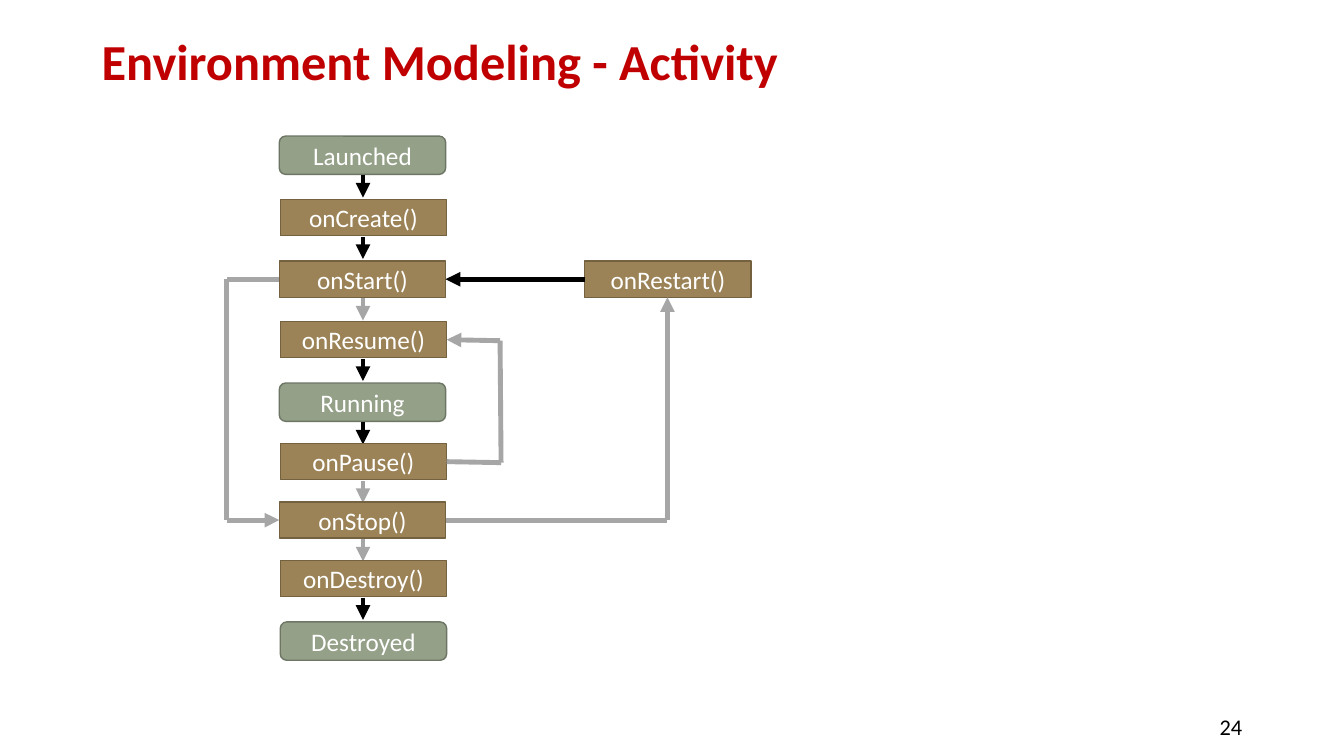
from dataclasses import dataclass
from itertools import pairwise

from lxml.etree import SubElement
from pptx import Presentation
from pptx.dml.color import RGBColor
from pptx.enum.shapes import MSO_CONNECTOR, MSO_SHAPE
from pptx.enum.text import MSO_ANCHOR, PP_ALIGN
from pptx.oxml.ns import qn
from pptx.util import Inches, Pt


@dataclass(frozen=True)
class Theme:
    font: str = "Calibri"
    title: str = "C00000"
    black: str = "000000"
    white: str = "FFFFFF"
    gray: str = "A6A6A6"
    state: tuple = ("94A088", "6D7665")
    call: tuple = ("9B8357", "736140")
    title_size: int = 36
    box_size: int = 18
    page_size: int = 16
    edge: float = 1
    arrow: float = 3.5


THEME = Theme()
BOX_W, STATE_H, CALL_H = 1.65, 0.38, 0.36
MID_X, STEP_LEN = 3.6, 0.22

# Label, left, top, and colour of the arrow to the next step
STEPS = [
    ("Launched", 2.77, 1.35, THEME.black),
    ("onCreate()", 2.78, 1.98, THEME.black),
    ("onStart()", 2.77, 2.59, THEME.gray),
    ("onResume()", 2.78, 3.19, THEME.black),
    ("Running", 2.77, 3.8, THEME.black),
    ("onPause()", 2.78, 4.4, THEME.gray),
    ("onStop()", 2.77, 4.98, THEME.gray),
    ("onDestroy()", 2.78, 5.56, THEME.black),
    ("Destroyed", 2.78, 6.17, None),
]

# Colour and corner points of each route beside the main column
ROUTES = [
    (THEME.gray, [(2.77, 2.77), (2.25, 2.77), (2.25, 5.16), (2.77, 5.16)]),
    (THEME.gray, [(4.42, 5.16), (6.62, 5.16), (6.62, 2.95)]),
    (THEME.black, [(5.8, 2.77), (4.42, 2.77)]),
    (THEME.gray, [(4.43, 4.58), (4.97, 4.59), (4.96, 3.38), (4.43, 3.37)]),
]


def color(code):
    return RGBColor.from_string(code)


def write(shape, text, size, tint, align, bold=False):
    frame = shape.text_frame
    frame.word_wrap = True
    frame.vertical_anchor = MSO_ANCHOR.MIDDLE
    frame.text = text
    line = frame.paragraphs[0]
    line.alignment = align
    font = line.runs[0].font
    font.name, font.size, font.bold = THEME.font, Pt(size), bold
    font.color.rgb = color(tint)
    return line


def add_label(slide, area, *style, **more):
    label = slide.shapes.add_textbox(*map(Inches, area))
    return write(label, *style, **more)


def add_box(slide, text, left, top):
    """Draw a call as a rectangle or a state as a rounded one; return its bottom."""
    is_call = text.endswith("()")
    kind = MSO_SHAPE.RECTANGLE if is_call else MSO_SHAPE.ROUNDED_RECTANGLE
    fill, edge = THEME.call if is_call else THEME.state
    height = CALL_H if is_call else STATE_H
    box = slide.shapes.add_shape(kind, *map(Inches, (left, top, BOX_W, height)))
    box.shadow.inherit = False
    box.fill.solid()
    box.fill.fore_color.rgb = color(fill)
    box.line.color.rgb = color(edge)
    box.line.width = Pt(THEME.edge)
    write(box, text, THEME.box_size, THEME.white, PP_ALIGN.CENTER)
    return top + height


def add_line(slide, start, end, tint, arrow=False):
    line = slide.shapes.add_connector(
        MSO_CONNECTOR.STRAIGHT, *map(Inches, (*start, *end)))
    line.line.color.rgb = color(tint)
    line.line.width = Pt(THEME.arrow)
    if arrow:
        SubElement(line.line._get_or_add_ln(), qn("a:tailEnd"), type="triangle")
    SubElement(line._element.spPr, qn("a:effectLst"))


def add_route(slide, tint, points):
    """Join the points with lines, the last one ending in an arrowhead."""
    for start, end in pairwise(points):
        add_line(slide, start, end, tint, arrow=end == points[-1])


def main():
    deck = Presentation()
    deck.slide_width, deck.slide_height = Inches(13.33), Inches(7.5)
    slide = deck.slides.add_slide(deck.slide_layouts[6])

    title = add_label(slide, (0.91, 0.12, 11.5, 1.04),
                      "Environment Modeling - Activity",
                      THEME.title_size, THEME.title, PP_ALIGN.LEFT, bold=True)
    title.line_spacing = 0.9
    add_label(slide, (9.42, 7.07, 3, 0.28), "24",
              THEME.page_size, THEME.black, PP_ALIGN.RIGHT)

    add_box(slide, "onRestart()", 5.8, 2.59)
    for text, left, top, tint in STEPS:
        start = add_box(slide, text, left, top) + 0.01
        if tint:
            add_route(slide, tint, [(MID_X, start), (MID_X, start + STEP_LEN)])
    for tint, points in ROUTES:
        add_route(slide, tint, points)

    deck.save("out.pptx")


if __name__ == "__main__":
    main()
